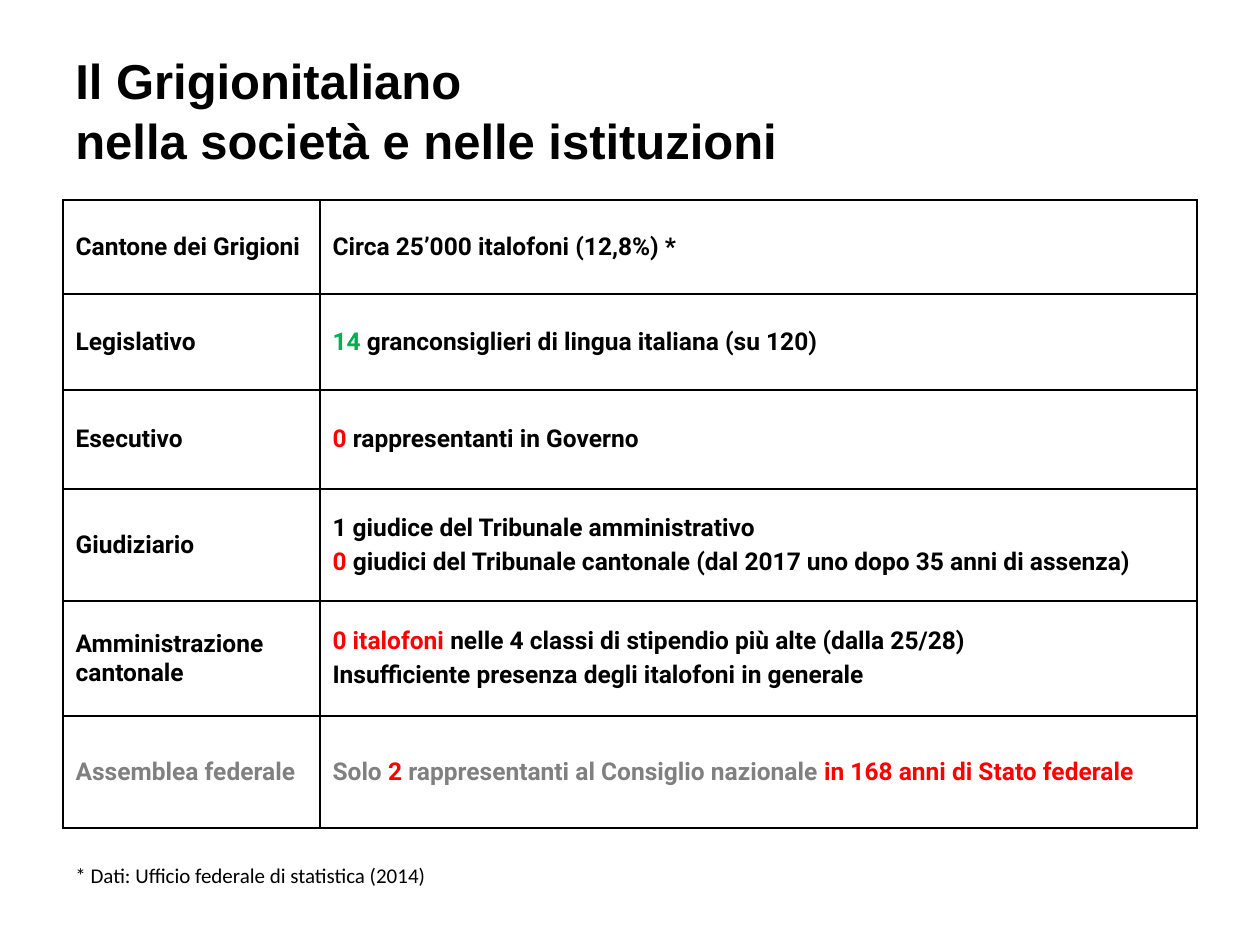
"""Build the slide on Italian speakers in the society and institutions of Grigioni."""
from lxml import etree
from pptx import Presentation, util as u
from pptx.dml.color import RGBColor
from pptx.enum import text
from pptx.oxml import ns

PX = 914400 / 126
COLORS = {"black": "000000", "green": "00B050", "red": "FF0000", "grey": "808080"}
COLUMNS = [257, 877]
ROWS = [
    (94, [("Cantone dei Grigioni", "black")],
     [[("Circa 25’000 italofoni (12,8%) *", "black")]]),
    (96, [("Legislativo", "black")],
     [[("14", "green"), (" granconsiglieri di lingua italiana (su 120)", "black")]]),
    (99, [("Esecutivo", "black")],
     [[("0", "red"), (" rappresentanti in Governo", "black")]]),
    (112, [("Giudiziario", "black")],
     [[("1 giudice del Tribunale amministrativo", "black")],
      [("0", "red"),
       (" giudici del Tribunale cantonale (dal 2017 uno dopo 35 anni di assenza)", "black")]]),
    (115, [("Amministrazione cantonale", "black")],
     [[("0 italofoni ", "red"),
       ("nelle 4 classi di stipendio più alte (dalla 25/28)", "black")],
      [("Insufficiente presenza degli italofoni in generale", "black")]]),
    (112, [("Assemblea federale", "grey")],
     [[("Solo ", "grey"), ("2", "red"),
       (" rappresentanti al Consiglio nazionale ", "grey"),
       ("in 168 anni di Stato federale", "red")]]),
]


def px(length):
    """Convert pixels to EMU."""
    return u.Emu(round(length * PX))


def set_font(font, name, size, bold):
    """Set typeface, size and weight."""
    font.name, font.size, font.bold = name, u.Pt(size), bold


def set_color(font, color):
    """Set the font colour by its name."""
    font.color.rgb = RGBColor.from_string(COLORS[color])


def add_text(slide, box, content, name, size, bold=False, wrap=True):
    """Add a text box in one style and return its text frame."""
    frame = slide.shapes.add_textbox(*map(px, box)).text_frame
    frame.word_wrap = wrap
    frame.text = content
    paragraph = frame.paragraphs[0]
    set_font(paragraph.font, name, size, bold)
    set_color(paragraph.font, "black")
    return frame


def add_borders(cell):
    """Draw a thin black line on all four sides of a cell."""
    properties = cell._tc.get_or_add_tcPr()
    for side in ("lnL", "lnR", "lnT", "lnB"):
        line = etree.SubElement(properties, ns.qn(f"a:{side}"), w=str(u.Pt(1)))
        fill = etree.SubElement(line, ns.qn("a:solidFill"))
        etree.SubElement(fill, ns.qn("a:srgbClr"), val=COLORS["black"])


def fill_cell(cell, lines):
    """Write coloured runs into a cell, one paragraph per line."""
    add_borders(cell)
    cell.fill.background()
    cell.vertical_anchor = text.MSO_ANCHOR.MIDDLE
    frame = cell.text_frame
    for index, runs in enumerate(lines):
        paragraph = frame.add_paragraph() if index else frame.paragraphs[0]
        if index:
            paragraph.space_before = u.Pt(2.8)
        set_font(paragraph.font, "Roboto", 14, True)
        for content, color in runs:
            run = paragraph.add_run()
            run.text = content
            set_color(run.font, color)


def add_institutions(slide):
    """Add the table of institutions."""
    height = sum(row[0] for row in ROWS)
    box = (63, 200, sum(COLUMNS), height)
    table = slide.shapes.add_table(len(ROWS), len(COLUMNS), *map(px, box)).table
    table.first_row = table.horz_banding = False
    for column, width in zip(table.columns, COLUMNS):
        column.width = px(width)
    for index, (row_height, label, lines) in enumerate(ROWS):
        table.rows[index].height = px(row_height)
        fill_cell(table.cell(index, 0), [label])
        fill_cell(table.cell(index, 1), lines)


def main():
    """Build and save the presentation."""
    presentation = Presentation()
    presentation.slide_width, presentation.slide_height = px(1260), px(945)
    slide = presentation.slides.add_slide(presentation.slide_layouts[6])
    title = add_text(slide, (63, 53, 1134, 113),
                     "Il Grigionitaliano\vnella società e nelle istituzioni",
                     "Arial", 28, bold=True)
    title.vertical_anchor = text.MSO_ANCHOR.MIDDLE
    title.paragraphs[0].line_spacing = u.Pt(34)
    add_institutions(slide)
    add_text(slide, (63, 856, 382, 38),
             "* Dati: Ufficio federale di statistica (2014)", "Calibri", 12, wrap=False)
    presentation.save("out.pptx")


if __name__ == "__main__":
    main()
